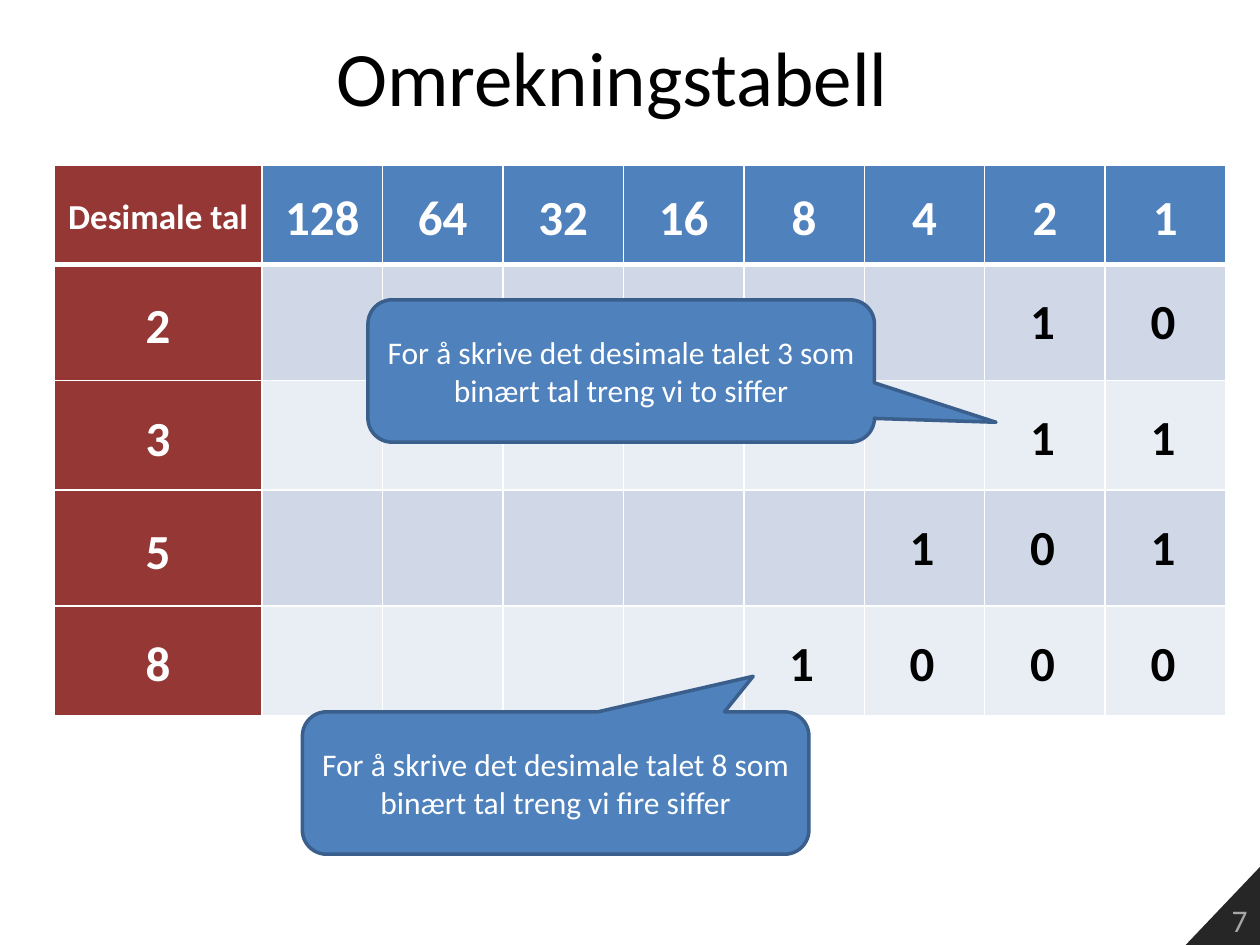
from collections import namedtuple

from lxml import etree
from pptx import Presentation
from pptx import util as u
from pptx.dml.color import RGBColor
from pptx.enum import shapes, text
from pptx.oxml.ns import qn

Box = namedtuple("Box", "left top width height")

FONT = "Calibri"
WHITE, BLACK, GREY, CHARCOAL = "FFFFFF", "000000", "A6A6A6", "262626"
BLUE, DARK_BLUE, RED = "4F81BD", "3A5F8C", "953735"
BANDS = ("D0D8E8", "E9EDF4")

NUMBERS = (2, 3, 5, 8)
PLACES = 8
ROW_HEIGHTS = (0.79, 0.92, 0.87, 0.92, 0.87)
LABEL_WIDTH = 1.65


def color(value):
    return RGBColor.from_string(value)


def inches(box):
    return [u.Inches(length) for length in box]


def paint(shape, fill, line=None, line_width=2):
    shape.shadow.inherit = False
    shape.fill.solid()
    shape.fill.fore_color.rgb = color(fill)
    if line:
        shape.line.color.rgb = color(line)
        shape.line.width = u.Pt(line_width)
    else:
        shape.line.fill.background()


def write(frame, words, size, ink, align=text.PP_ALIGN.CENTER, bold=False, spacing=None):
    paragraph = frame.paragraphs[0]
    paragraph.alignment = align
    paragraph.line_spacing = spacing
    run = paragraph.add_run()
    run.text = words
    for name, value in {"name": FONT, "size": u.Pt(size), "bold": bold}.items():
        setattr(run.font, name, value)
    run.font.color.rgb = color(ink)


def add_title(slide, box, words):
    title = slide.shapes.title
    title.left, title.top, title.width, title.height = inches(box)
    title.text_frame.vertical_anchor = text.MSO_ANCHOR.MIDDLE
    write(title.text_frame, words, 44, BLACK)


def set_borders(cell, widths):
    """Give a cell white borders; widths are points for left, right, top, bottom."""
    properties = cell._tc.get_or_add_tcPr()
    for side, width in zip("LRTB", widths):
        line = etree.SubElement(properties, qn(f"a:ln{side}"), w=str(u.Pt(width)))
        fill = etree.SubElement(line, qn("a:solidFill"))
        etree.SubElement(fill, qn("a:srgbClr"), val=WHITE)


def add_conversion_table(slide, box):
    """Table of place values, with each number's bits in boxes over its row."""
    place_width = (box.width - LABEL_WIDTH) / PLACES
    frame = slide.shapes.add_table(len(ROW_HEIGHTS), PLACES + 1, *inches(box))
    table = frame.table
    for column_index, column in enumerate(table.columns):
        column.width = u.Inches(place_width if column_index else LABEL_WIDTH)
    for row, height in zip(table.rows, ROW_HEIGHTS):
        row.height = u.Inches(height)

    header = ["Desimale tal"] + [str(2 ** power) for power in reversed(range(PLACES))]
    rows = [header] + [[str(number)] + [""] * PLACES for number in NUMBERS]
    for row_index, words in enumerate(rows):
        for column_index, word in enumerate(words):
            cell = table.cell(row_index, column_index)
            set_borders(cell, (1, 1, 3 if row_index == 1 else 1, 1 if row_index else 3))
            cell.fill.solid()
            body_fill = BANDS[(row_index - 1) % 2] if row_index else BLUE
            cell.fill.fore_color.rgb = color(body_fill if column_index else RED)
            if word:
                layout = {"margin_left": u.Inches(0.07), "margin_right": u.Inches(0.07),
                          "margin_top": 0, "margin_bottom": 0,
                          "vertical_anchor": text.MSO_ANCHOR.MIDDLE}
                for name, value in layout.items():
                    setattr(cell, name, value)
                size = 28 if row_index or column_index else 20
                write(cell.text_frame, word, size, WHITE, bold=True, spacing=1.15)

    for row_index, number in enumerate(NUMBERS, start=1):
        top = box.top + sum(ROW_HEIGHTS[:row_index]) + 0.16
        for place, bit in enumerate(reversed(f"{number:b}"), start=1):
            left = box.left + box.width - place * place_width + 0.26
            add_bit(slide, Box(left, top, 0.4, 0.57), bit)


def add_bit(slide, box, bit):
    frame = slide.shapes.add_textbox(*inches(box)).text_frame
    frame.word_wrap = False
    frame.auto_size = text.MSO_AUTO_SIZE.SHAPE_TO_FIT_TEXT
    write(frame, bit, 28, BLACK, text.PP_ALIGN.LEFT, bold=True)


def add_callout(slide, box, words, tip):
    """Callout whose tip is given as shares of the box, from its centre."""
    callout = slide.shapes.add_shape(
        shapes.MSO_SHAPE.ROUNDED_RECTANGULAR_CALLOUT, *inches(box))
    for index, share in enumerate((*tip, 0.17)):
        callout.adjustments[index] = share
    paint(callout, BLUE, DARK_BLUE)
    callout.text_frame.word_wrap = True
    callout.text_frame.vertical_anchor = text.MSO_ANCHOR.MIDDLE
    write(callout.text_frame, words, 18, WHITE)


def add_page_corner(slide, box, number):
    left, top, width, height = inches(box)
    builder = slide.shapes.build_freeform(left, top + height)
    builder.add_line_segments([(left + width, top), (left + width, top + height)], close=True)
    corner = builder.convert_to_shape()
    paint(corner, CHARCOAL)
    corner.text_frame.vertical_anchor = text.MSO_ANCHOR.BOTTOM
    write(corner.text_frame, number, 18, GREY, text.PP_ALIGN.RIGHT)


def main():
    presentation = Presentation()
    presentation.slide_width, presentation.slide_height = u.Inches(10), u.Inches(7.5)
    slide = presentation.slides.add_slide(presentation.slide_layouts[5])

    add_page_corner(slide, Box(9.41, 6.88, 0.59, 0.62), "7")
    add_title(slide, Box(0.43, 0.13, 9, 0.94), "Omrekningstabell ")
    add_conversion_table(slide, Box(0.43, 1.31, 9.3, sum(ROW_HEIGHTS)))
    callouts = (
        (2.92, 2.38, 3, "to", (0.74, 0.36)),
        (2.4, 5.65, 8, "fire", (0.39, -0.75)),
    )
    for left, top, number, digits, tip in callouts:
        words = f"For å skrive det desimale talet {number} som binært tal treng vi {digits} siffer"
        add_callout(slide, Box(left, top, 4.02, 1.13), words, tip)

    presentation.save("out.pptx")


if __name__ == "__main__":
    main()
